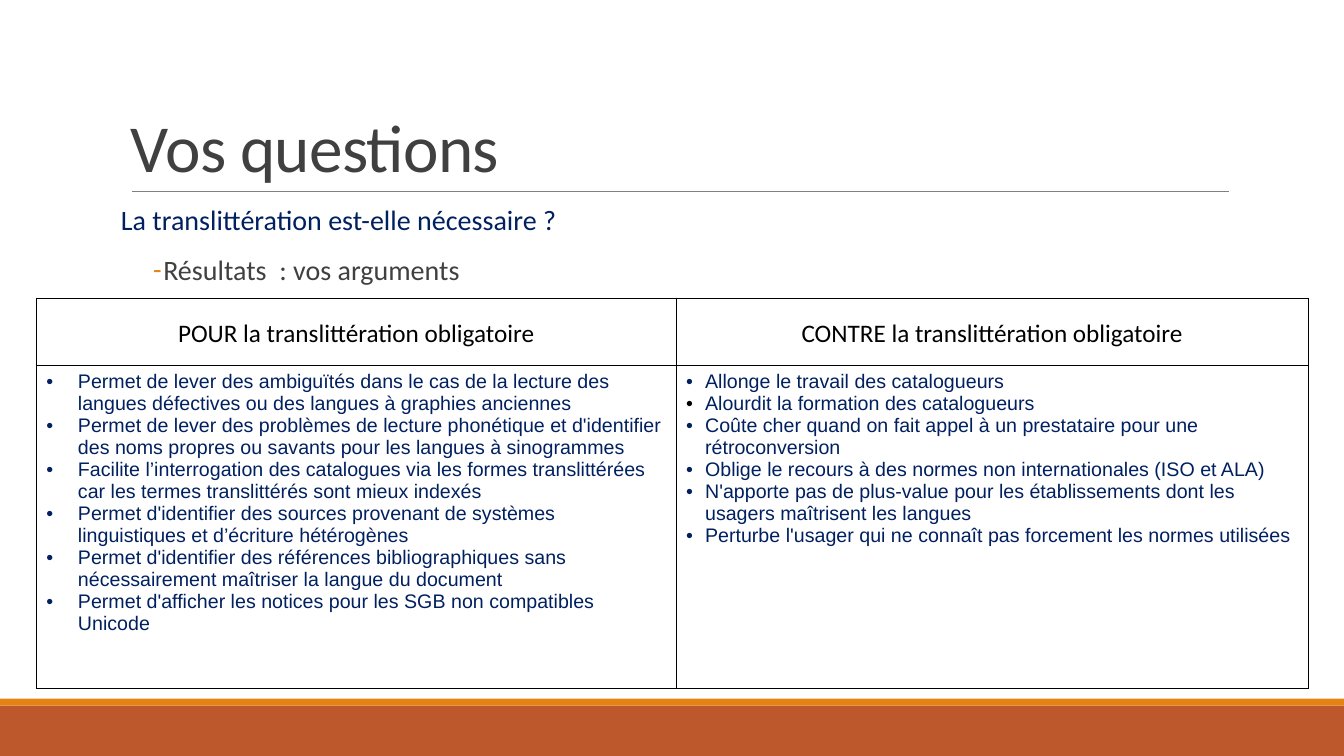
from lxml import etree
from pptx import Presentation
from pptx.dml.color import RGBColor
from pptx.enum import shapes, text
from pptx.oxml import ns
from pptx.util import Pt

HEX = {"rust": "BD582C", "amber": "E48312", "rule": "808080",
       "dark": "404040", "navy": "002060", "black": "000000"}
WIDE, HIGH = 960, 540

PROS = [
    "Permet de lever des ambiguïtés dans le cas de la lecture des langues défectives ou des langues à graphies anciennes",
    "Permet de lever des problèmes de lecture phonétique et d'identifier des noms propres ou savants pour les langues à sinogrammes",
    "Facilite l’interrogation des catalogues via les formes translittérées car les termes translittérés sont mieux indexés",
    "Permet d'identifier des sources provenant de systèmes linguistiques et d’écriture hétérogènes",
    "Permet d'identifier des références bibliographiques sans nécessairement maîtriser la langue du document",
    "Permet d'afficher les notices pour les SGB non compatibles Unicode",
]
CONS = [
    "Allonge le travail des catalogueurs",
    "Alourdit la formation des catalogueurs",
    "Coûte cher quand on fait appel à un prestataire pour une rétroconversion",
    "Oblige le recours à des normes non internationales (ISO et ALA)",
    "N'apporte pas de plus-value pour les établissements dont les usagers maîtrisent les langues",
    "Perturbe l'usager qui ne connaît pas forcement les normes utilisées",
]
# Heading, arguments, hanging indent, bullet colours that differ
SIDES = [
    ("POUR la translittération obligatoire", PROS, 22.5, {}),
    ("CONTRE la translittération obligatoire", CONS, 13.5, {1: "black"}),
]


def rgb(name):
    return RGBColor.from_string(HEX[name])


def sub(node, tag, **attrs):
    return etree.SubElement(node, ns.qn(tag), attrs)


def bullet(para, mark, color, left, hang):
    props = para._p.get_or_add_pPr()
    props.set("marL", str(Pt(left)))
    props.set("indent", str(Pt(-hang)))
    sub(sub(props, "a:buClr"), "a:srgbClr", val=HEX[color])
    sub(props, "a:buFont", typeface="Arial" if mark == "•" else "Calibri")
    sub(props, "a:buChar", char=mark)


def write(para, words, size, color, face="Calibri", line=None):
    para.text = words
    font = para.font
    font.size, font.name = Pt(size), face
    font.color.rgb = rgb(color)
    if line:
        para.line_spacing = line


def frame(slide, box, inset):
    tf = slide.shapes.add_textbox(*map(Pt, box)).text_frame
    tf.word_wrap = True
    tf.margin_left = tf.margin_right = Pt(inset)
    return tf


def footer(slide, box):
    left, top, width, height = box
    strip = 5
    for y, h, color in [(top + strip, height - strip, "rust"), (top, strip, "amber")]:
        bar = slide.shapes.add_shape(shapes.MSO_SHAPE.RECTANGLE,
                                     Pt(left), Pt(y), Pt(width), Pt(h))
        bar.shadow.inherit = False
        bar.fill.solid()
        bar.fill.fore_color.rgb = rgb(color)
        bar.line.fill.background()


def title(slide, box):
    left, top, width, height = box
    tf = frame(slide, box, 7.2)
    tf.vertical_anchor = text.MSO_ANCHOR.BOTTOM
    para = tf.paragraphs[0]
    write(para, "Vos questions", 48, "dark", line=0.85)
    para.runs[0].font._element.set("spc", "-50")
    # Rule under the title
    base = Pt(top + height)
    rule = slide.shapes.add_connector(shapes.MSO_CONNECTOR.STRAIGHT,
                                      Pt(left + 8), base, Pt(left + width - 0.5), base)
    rule.line.color.rgb = rgb("rule")
    rule.line.width = Pt(0.5)
    sub(rule._element.spPr, "a:effectLst")


def intro(slide, box):
    tf = frame(slide, box, 0)
    ask, reply = tf.paragraphs[0], tf.add_paragraph()
    bullet(reply, "-", "amber", 30.25, 7.2)
    reply.alignment = text.PP_ALIGN.JUSTIFY
    write(ask, "La translittération est-elle nécessaire ?", 20, "navy", line=0.9)
    write(reply, "Résultats  : vos arguments", 20, "dark", line=0.9)
    for para in (ask, reply):
        para.space_before, para.space_after = Pt(12), Pt(2)


def border(cell):
    props = cell._tc.get_or_add_tcPr()
    for spot, side in enumerate("LRTB"):
        edge = sub(props, f"a:ln{side}", w=str(Pt(1)))
        sub(sub(edge, "a:solidFill"), "a:srgbClr", val=HEX["black"])
        props.insert(spot, edge)


def debate(slide, box):
    grid = slide.shapes.add_table(2, len(SIDES), *map(Pt, box)).table
    grid.first_row = grid.horz_banding = False
    head = 48.25
    grid.rows[0].height, grid.rows[1].height = Pt(head), Pt(box[3] - head)
    grid.columns[0].width, grid.columns[1].width = Pt(457), Pt(box[2] - 457)
    for col, (name, points, hang, odd) in enumerate(SIDES):
        para = grid.cell(0, col).text_frame.paragraphs[0]
        write(para, name, 18, "black", line=1.5)
        para.alignment = text.PP_ALIGN.CENTER
        tf = grid.cell(1, col).text_frame
        for i, point in enumerate(points):
            para = tf.add_paragraph() if i else tf.paragraphs[0]
            bullet(para, "•", odd.get(i, "navy"), hang, hang)
            write(para, point, 14, "navy", "Arial")
    for cell in grid.iter_cells():
        cell.fill.background()
        border(cell)


def main():
    deck = Presentation()
    deck.slide_width, deck.slide_height = Pt(WIDE), Pt(HIGH)
    slide = deck.slides.add_slide(deck.slide_layouts[6])
    footer(slide, (0, 499, WIDE, HIGH - 499))
    title(slide, (86.4, 22.5, 792, 114.25))
    intro(slide, (86.4, 144, 792, 66))
    debate(slide, (26, 213, 908.5, 278.75))
    deck.save("out.pptx")


if __name__ == "__main__":
    main()
